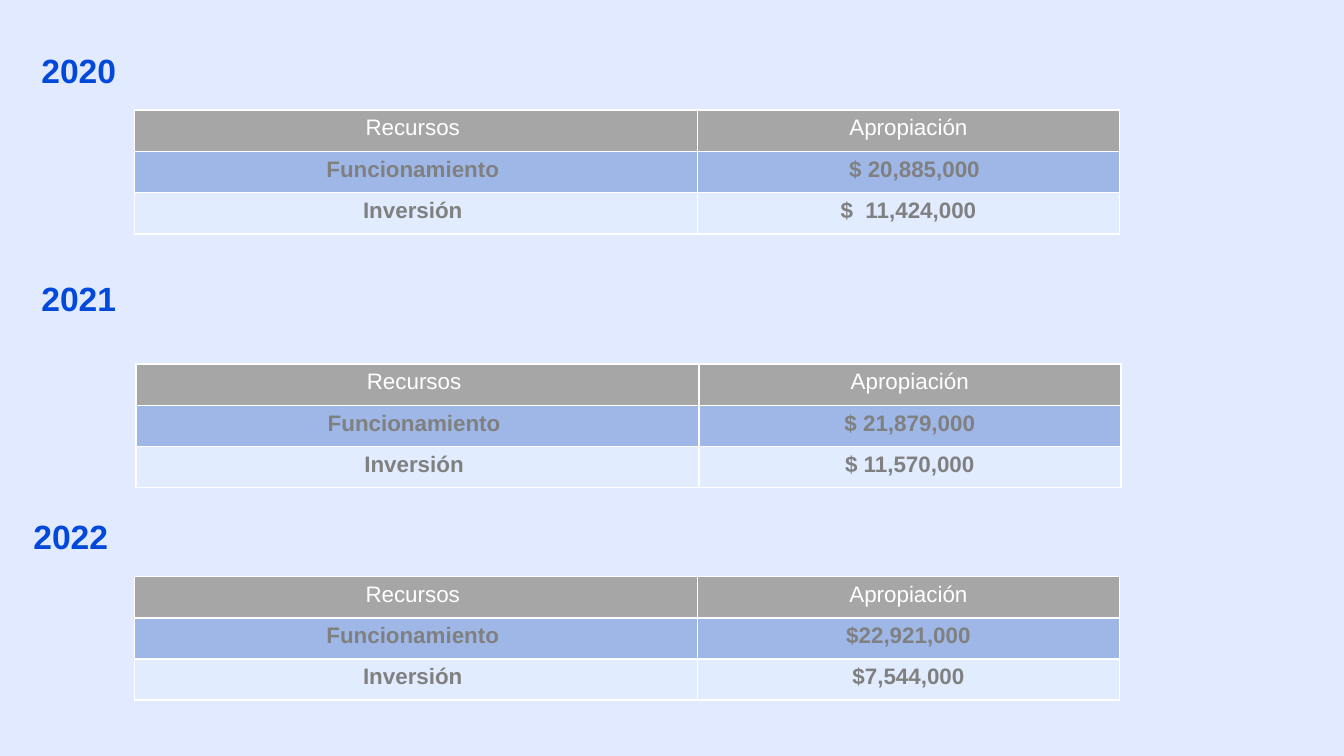
from lxml.etree import SubElement
from pptx import Presentation
from pptx.dml.color import RGBColor
from pptx.enum.text import MSO_AUTO_SIZE, PP_ALIGN
from pptx.oxml.ns import qn
from pptx.util import Inches, Pt

COLORS = {
    "background": "E2EAFF",
    "year": "0049DB",
    "header": "A6A6A6",
    "operation": "9FB7E7",
    "investment": "E2ECFF",
    "white": "FFFFFF",
    "amount": "808080",
}
YEAR_FORMAT = {"size": Pt(18), "bold": True, "name": "Arial"}
HEADER_FORMAT = {"size": Pt(12), "bold": False, "name": "Arial"}
BODY_FORMAT = {"size": Pt(12), "bold": True, "name": "Arial"}
CELL_FORMAT = {
    "margin_left": Inches(0.07),
    "margin_right": Inches(0.07),
    "margin_top": Inches(0.04),
    "margin_bottom": Inches(0.04),
}
# A 16:9 page
PAGE_FORMAT = {"slide_width": Inches(10), "slide_height": Inches(10 * 9 / 16)}
COLUMN_WIDTHS = (4.19, 3.14)
TABLE_HEIGHT = 0.92

# Year, label position, table position, operation, investment, operation indent
BUDGETS = [
    ("2020", (0.21, 0.32), (1, 0.82), "$ 20,885,000", "$  11,424,000", 0.09),
    ("2021", (0.21, 2.02), (1.01, 2.71), "$ 21,879,000", "$ 11,570,000", 0),
    ("2022", (0.15, 3.79), (1, 4.29), "$22,921,000", "$7,544,000", 0),
]


def color(name):
    return RGBColor.from_string(COLORS[name])


def set_values(target, values):
    for name, value in values.items():
        setattr(target, name, value)


def add_span(para, text, font_format, color_name):
    span = para.add_run()
    span.text = text
    set_values(span.font, font_format)
    span.font.color.rgb = color(color_name)


def add_year(page, year, position):
    left, top = position
    box = page.shapes.add_textbox(Inches(left), Inches(top), Inches(1.26), Inches(0.4))
    frame = box.text_frame
    set_values(frame, {"word_wrap": True, "auto_size": MSO_AUTO_SIZE.SHAPE_TO_FIT_TEXT})
    add_span(frame.paragraphs[0], year, YEAR_FORMAT, "year")


def set_borders(cell):
    properties = cell._tc.get_or_add_tcPr()
    for side in "LRTB":
        line = SubElement(properties, qn(f"a:ln{side}"), w=str(Pt(1)))
        fill = SubElement(line, qn("a:solidFill"))
        SubElement(fill, qn("a:srgbClr"), val=COLORS["white"])


def fill_cell(cell, text, fill_name):
    set_values(cell, CELL_FORMAT)
    set_borders(cell)
    cell.fill.solid()
    cell.fill.fore_color.rgb = color(fill_name)
    para = cell.text_frame.paragraphs[0]
    para.alignment = PP_ALIGN.CENTER
    if fill_name == "header":
        add_span(para, text, HEADER_FORMAT, "white")
    else:
        add_span(para, text, BODY_FORMAT, "amount")


def add_budget_table(page, position, operation, investment, indent):
    rows = [
        ("header", "Recursos ", "Apropiación"),
        ("operation", "Funcionamiento ", operation),
        ("investment", "Inversión ", investment),
    ]
    left, top = position
    table = page.shapes.add_table(
        len(rows), len(COLUMN_WIDTHS), Inches(left), Inches(top),
        Inches(sum(COLUMN_WIDTHS)), Inches(TABLE_HEIGHT),
    ).table
    for column, width in zip(table.columns, COLUMN_WIDTHS):
        column.width = Inches(width)
    for row_index, (fill_name, *texts) in enumerate(rows):
        for column_index, text in enumerate(texts):
            fill_cell(table.cell(row_index, column_index), text, fill_name)
    # Some amounts sit slightly right of the centre
    table.cell(1, 1).margin_left += Inches(indent)


def main():
    deck = Presentation()
    set_values(deck, PAGE_FORMAT)
    page = deck.slides.add_slide(deck.slide_layouts[6])

    # Background
    page.background.fill.solid()
    page.background.fill.fore_color.rgb = color("background")

    # One label and one table for each year
    for year, label_position, table_position, *amounts in BUDGETS:
        add_year(page, year, label_position)
        add_budget_table(page, table_position, *amounts)

    deck.save("out.pptx")


if __name__ == "__main__":
    main()
